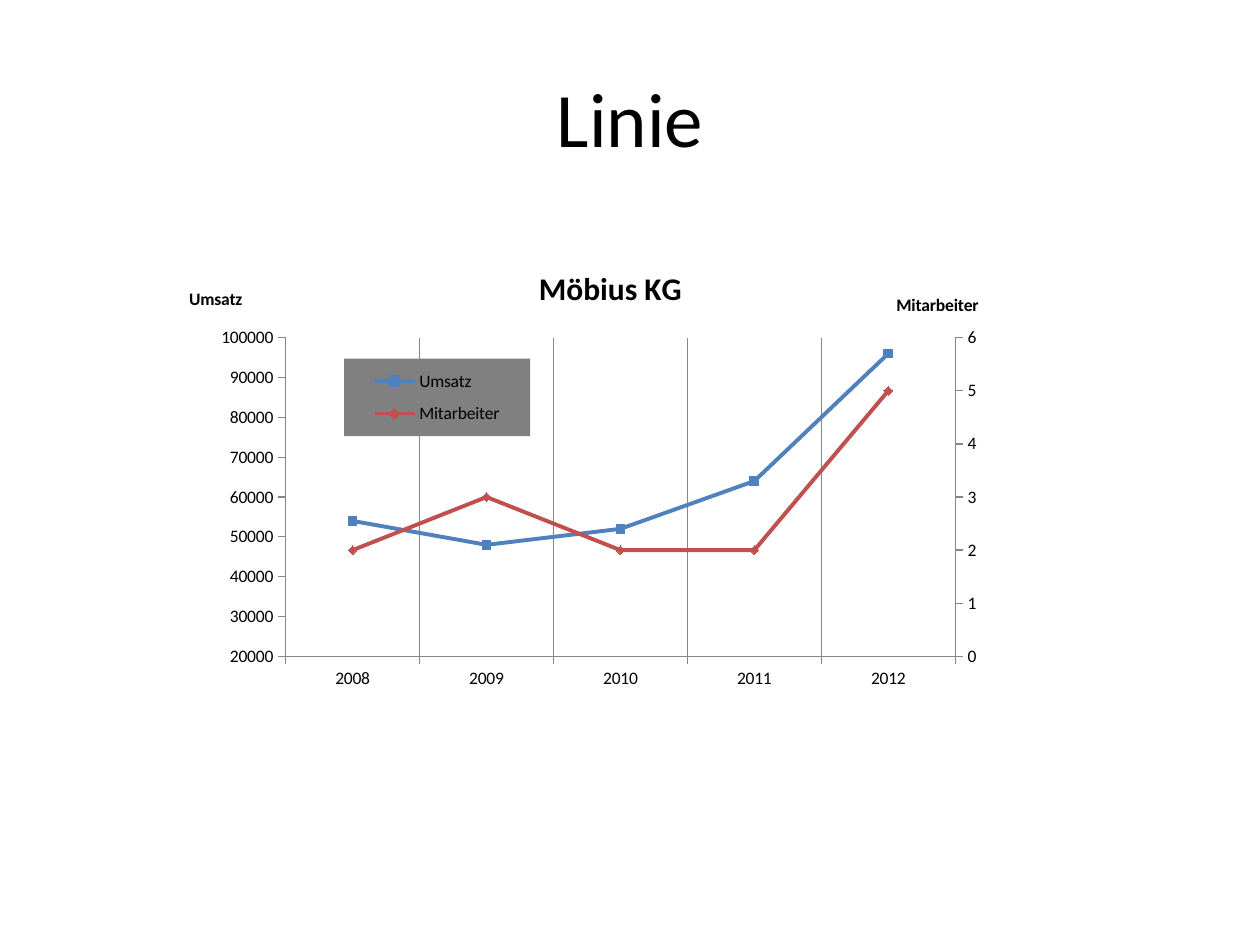
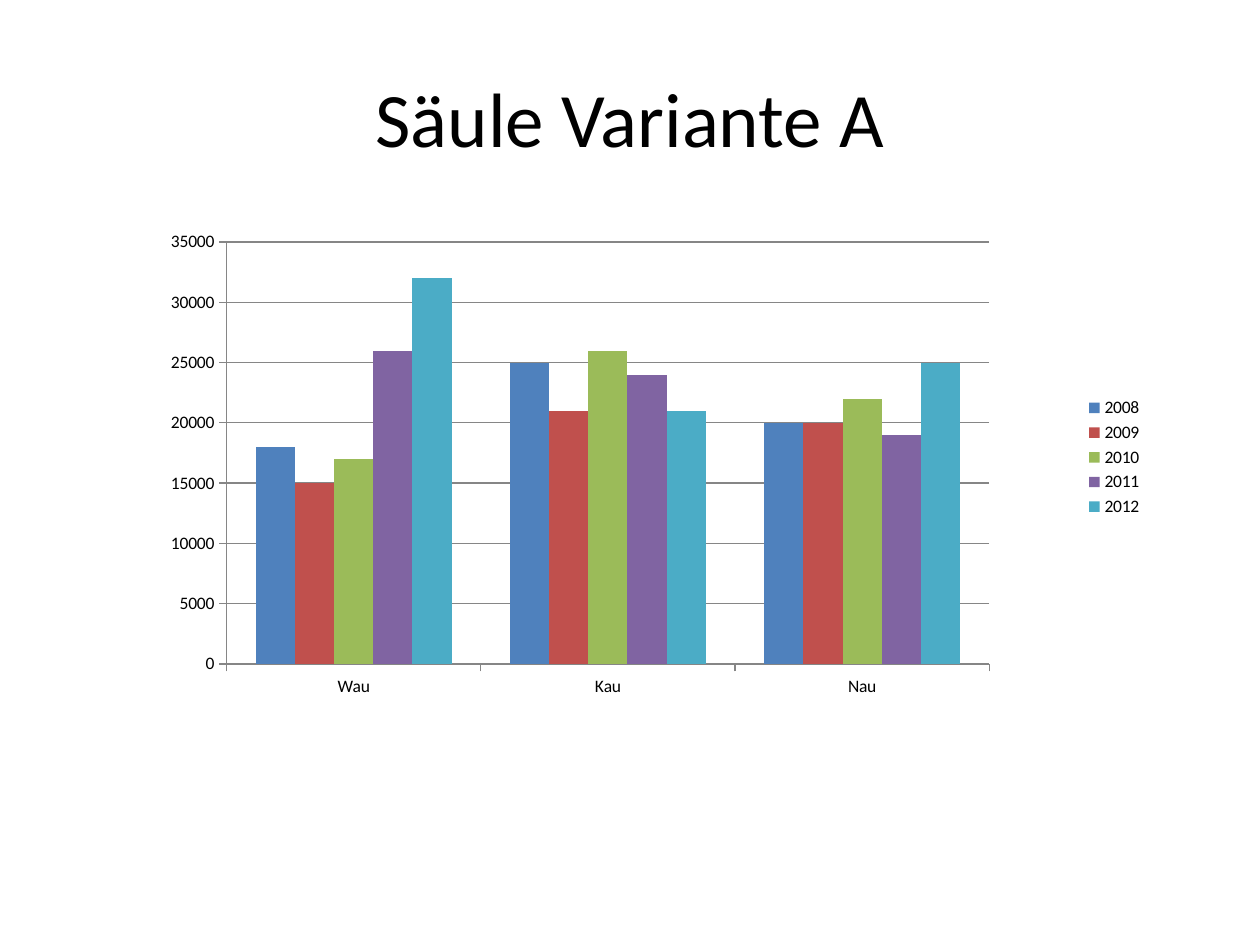
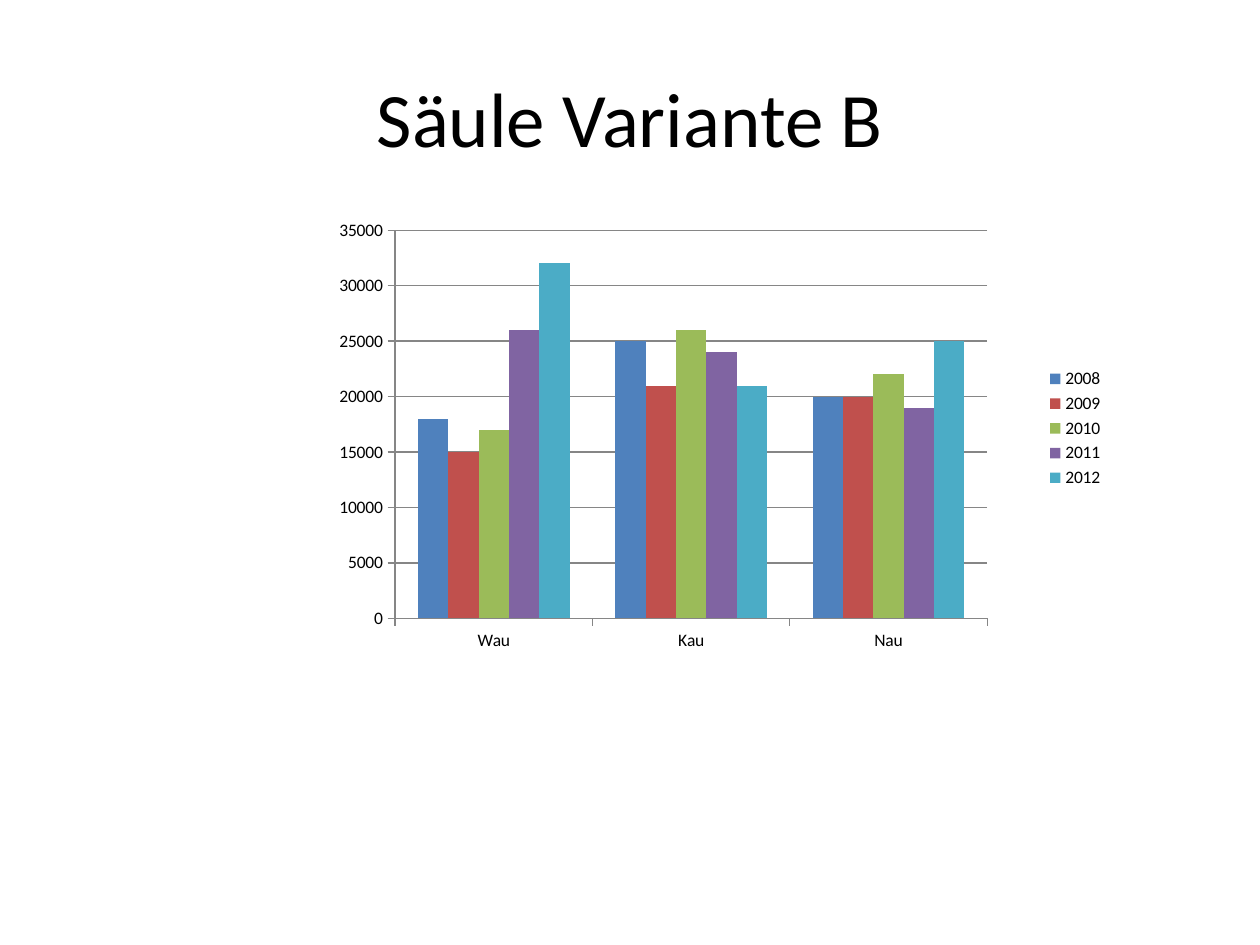
from copy import deepcopy
from dataclasses import dataclass

from pptx import Presentation
from pptx.chart.axis import CategoryAxis, ValueAxis
from pptx.chart.data import CategoryChartData as ChartData
from pptx.dml.color import RGBColor as RGB
from pptx.enum.chart import XL_CHART_TYPE as CT, XL_LEGEND_POSITION as LP
from pptx.enum.chart import XL_MARKER_STYLE as MS, XL_TICK_MARK as TM
from pptx.enum.text import MSO_ANCHOR as MA, PP_ALIGN as PA
from pptx.oxml import parse_xml
from pptx.oxml.ns import nsdecls, qn
from pptx.util import Pt

PX = 9144  # EMU per px, 100 px to the inch
TITLE_BOX = (50, 30, 900, 125)

# Places inside a chart, in thousandths of its size
COLUMN_PLOT = (100, 75, 739, 833)
LINE_PLOT = (128, 200, 767, 684)
LINE_LEGEND = (195, 245, 213, 166)
AXIS_TITLES = ((14, 86), (824, 99))

YEARS = ("2008", "2009", "2010", "2011", "2012")
REGIONS = ("Wau", "Kau", "Nau")
REGION_SALES = dict(zip(YEARS, (
    (18000, 25000, 20000),
    (15000, 21000, 20000),
    (17000, 26000, 22000),
    (26000, 24000, 19000),
    (32000, 21000, 25000),
)))
COMPANY = {
    "Umsatz": (54000, 48000, 52000, 64000, 96000),
    "Mitarbeiter": (2, 3, 2, 2, 5),
}


@dataclass(frozen=True)
class Theme:
    font: str = "Calibri"
    text: str = "000000"
    axis: str = "868686"
    legend: str = "808080"
    series: tuple = ("4F81BD", "C0504D", "9BBB59", "8064A2", "4BACC6")
    title_pt: int = 44
    chart_title_pt: int = 18
    chart_pt: int = 10
    line_pt: float = 2.25
    axis_pt: float = 0.75


def set_attrs(obj, **values):
    for name, value in values.items():
        setattr(obj, name, value)


def set_layout(el, *place, inner=False):
    """Place a chart part by thousandths of the chart's size."""
    for old in el.findall(qn("c:layout")):
        el.remove(old)
    tags = '<c:layoutTarget val="inner"/>' if inner else ""
    tags += '<c:xMode val="edge"/><c:yMode val="edge"/>'
    for tag, value in zip("xywh", place):
        tags += f'<c:{tag} val="{value / 1000}"/>'
    layout = parse_xml(f'<c:layout {nsdecls("c")}><c:manualLayout>{tags}'
                       '</c:manualLayout></c:layout>')
    before = [c for c in el if c.tag in (qn("c:tx"), qn("c:legendPos"))]
    el.insert(len(before), layout)


def add_right_axis(chart):
    """Move the last series to its own value axis; return that axis."""
    left = chart.plots[0]._element
    area = left.getparent()
    right = deepcopy(left)
    left.remove(left.findall(qn("c:ser"))[-1])
    for ser in right.findall(qn("c:ser"))[:-1]:
        right.remove(ser)
    left.addnext(right)

    cat_el = deepcopy(area.find(qn("c:catAx")))
    val_el = deepcopy(area.find(qn("c:valAx")))
    area.find(qn("c:valAx")).addnext(val_el)
    val_el.addnext(cat_el)
    new_ids = dict(zip((e.get("val") for e in left.findall(qn("c:axId"))),
                       ("50010", "50020")))
    for part in (right, cat_el, val_el):
        for tag in ("c:axId", "c:crossAx"):
            for e in part.findall(qn(tag)):
                e.set("val", new_ids[e.get("val")])
    val_el.find(qn("c:axPos")).set("val", "r")
    val_el.find(qn("c:crosses")).set("val", "max")
    CategoryAxis(cat_el).visible = False
    return ValueAxis(val_el)


class Deck:
    def __init__(self, theme):
        self.theme = theme
        self.prs = Presentation()
        set_attrs(self.prs, slide_width=1000 * PX, slide_height=750 * PX)

    def style_font(self, font, size, bold=False):
        set_attrs(font, name=self.theme.font, size=Pt(size), bold=bold)
        font.color.rgb = RGB.from_string(self.theme.text)

    def style_line(self, line, color, width):
        line.color.rgb = RGB.from_string(color)
        line.width = Pt(width)

    def style_fill(self, fill, color):
        fill.solid()
        fill.fore_color.rgb = RGB.from_string(color)

    def add_slide(self, title):
        self.slide = self.prs.slides.add_slide(self.prs.slide_layouts[5])
        sp = self.slide.shapes.title
        for name, value in zip(("left", "top", "width", "height"), TITLE_BOX):
            setattr(sp, name, value * PX)
        tf = sp.text_frame
        set_attrs(tf, text=title, vertical_anchor=MA.MIDDLE, word_wrap=True)
        p = tf.paragraphs[0]
        p.alignment = PA.CENTER
        self.style_font(p.runs[0].font, self.theme.title_pt)

    def add_chart(self, kind, box, cats, series, plot):
        data = ChartData()
        data.categories = cats
        for name, values in series.items():
            data.add_series(name, values)
        frame = self.slide.shapes.add_chart(kind, *(v * PX for v in box), data)
        chart = frame.chart
        set_attrs(chart, has_title=False, has_legend=True)
        set_attrs(chart.legend, position=LP.RIGHT, include_in_layout=False)
        self.style_font(chart.font, self.theme.chart_pt)
        chart.plots[0].vary_by_categories = False
        set_layout(chart.plots[0]._element.getparent(), *plot, inner=True)
        return chart

    def format_axis(self, axis, grid=False):
        th = self.theme
        set_attrs(axis, has_major_gridlines=grid, has_minor_gridlines=False,
                  major_tick_mark=TM.OUTSIDE, minor_tick_mark=TM.NONE)
        self.style_line(axis.format.line, th.axis, th.axis_pt)
        if grid:
            self.style_line(axis.major_gridlines.format.line, th.axis, th.axis_pt)

    def add_chart_text(self, title, text, size):
        tf = title.text_frame
        tf.text = text
        self.style_font(tf.paragraphs[0].runs[0].font, size, bold=True)

    def add_axis_title(self, axis, text, place):
        """Add a horizontal axis title at a place inside the chart."""
        title = axis.axis_title
        self.add_chart_text(title, text, self.theme.chart_pt)
        body = title.text_frame._txBody.find(qn("a:bodyPr"))
        for name, value in {"rot": "0", "vert": "horz"}.items():
            body.set(name, value)
        set_layout(title._element, *place)

    def fill_legend(self, legend):
        fill = parse_xml(
            f'<c:spPr {nsdecls("c", "a")}><a:solidFill>'
            f'<a:srgbClr val="{self.theme.legend}"/></a:solidFill></c:spPr>')
        legend._element.find(qn("c:overlay")).addnext(fill)

    def add_columns(self, box):
        chart = self.add_chart(CT.COLUMN_CLUSTERED, box, REGIONS,
                               REGION_SALES, COLUMN_PLOT)
        set_attrs(chart.plots[0], gap_width=150, overlap=0)
        self.format_axis(chart.category_axis)
        self.format_axis(chart.value_axis, grid=True)
        for ser, color in zip(chart.series, self.theme.series):
            self.style_fill(ser.format.fill, color)

    def add_lines(self, box, title):
        th = self.theme
        chart = self.add_chart(CT.LINE_MARKERS, box, YEARS, COMPANY, LINE_PLOT)
        self.add_chart_text(chart.chart_title, title, th.chart_title_pt)
        for ser, color, mark in zip(chart.series, th.series,
                                    (MS.SQUARE, MS.DIAMOND)):
            ser.smooth = False
            self.style_line(ser.format.line, color, th.line_pt)
            set_attrs(ser.marker, style=mark, size=5)
            self.style_fill(ser.marker.format.fill, color)
            self.style_line(ser.marker.format.line, color, th.axis_pt)

        left = chart.value_axis
        right = add_right_axis(chart)
        self.format_axis(chart.category_axis, grid=True)
        for axis, name, place in zip((left, right), COMPANY, AXIS_TITLES):
            self.format_axis(axis)
            self.add_axis_title(axis, name, place)
        left.minimum_scale = 20000
        self.fill_legend(chart.legend)
        set_layout(chart.legend._element, *LINE_LEGEND)


def main():
    deck = Deck(Theme())
    deck.add_slide("Linie")
    deck.add_lines((138, 194, 693, 370), "Möbius KG")
    for variant, box in {"A": (98, 162, 819, 402),
                         "B": (250, 155, 636, 370)}.items():
        deck.add_slide(f"Säule Variante {variant}")
        deck.add_columns(box)
    deck.prs.save("out.pptx")


if __name__ == "__main__":
    main()
